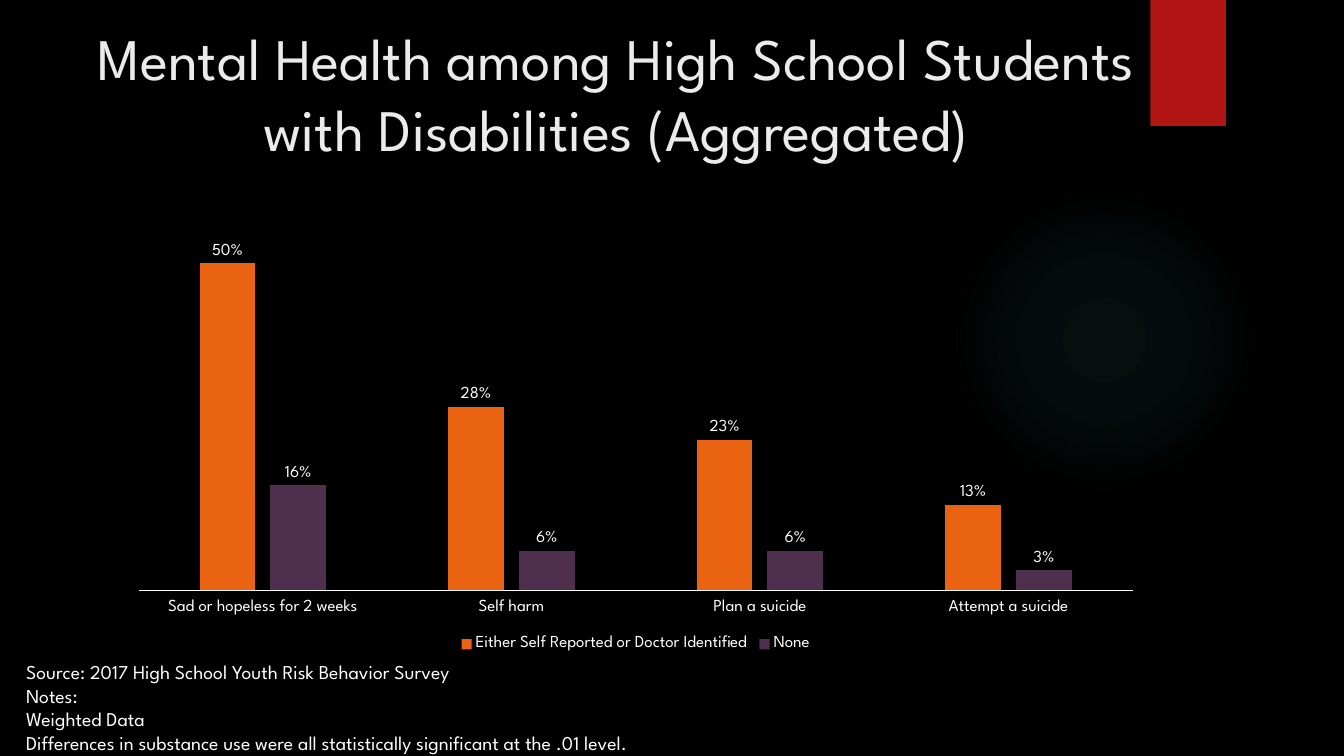
from dataclasses import dataclass

from lxml.etree import SubElement
from pptx import Presentation
from pptx.chart.data import CategoryChartData
from pptx.dml.color import RGBColor
from pptx.enum.chart import (XL_CHART_TYPE, XL_LABEL_POSITION,
                             XL_LEGEND_POSITION, XL_TICK_LABEL_POSITION,
                             XL_TICK_MARK)
from pptx.enum.shapes import MSO_SHAPE
from pptx.enum.text import MSO_ANCHOR, PP_ALIGN
from pptx.oxml import parse_xml
from pptx.oxml.ns import nsdecls, qn
from pptx.util import Inches, Pt

FONT = "League Spartan"
COLORS = {
    "background": "000000", "white": "FFFFFF", "title": "EBEBEB",
    "red": "B01513", "glow": "50B9C1", "orange": "EA6312", "purple": "4F2F4E",
}


@dataclass
class TextBlock:
    left: float
    top: float
    width: float
    height: float
    lines: list[str]
    size: float
    color: str
    align: PP_ALIGN
    anchor: MSO_ANCHOR


@dataclass
class Series:
    name: str
    values: list[float]
    color: str


TEXTS = [
    TextBlock(0.4, 0.15, 11.42, 1.53,
              ["Mental Health among High School Students "
               "with Disabilities (Aggregated)"],
              42, "title", PP_ALIGN.CENTER, MSO_ANCHOR.MIDDLE),
    TextBlock(0.16, 6.5, 13.18, 1.04,
              ["Source: 2017 High School Youth Risk Behavior Survey",
               "Notes:",
               "Weighted Data",
               "Differences in substance use were all statistically "
               "significant at the .01 level."],
              14, "white", PP_ALIGN.LEFT, MSO_ANCHOR.TOP),
]
CATEGORIES = ["Sad or hopeless for 2 weeks", "Self harm",
              "Plan a suicide", "Attempt a suicide"]
SERIES = [
    Series("Either Self Reported or Doctor Identified",
           [0.5, 0.28, 0.23, 0.13], "orange"),
    Series("None", [0.16, 0.06, 0.06, 0.03], "purple"),
]
GLOW_STOPS = [(0, 7), (36, 6), (69, 0)]  # position and opacity, percent


def rgb(name: str) -> RGBColor:
    return RGBColor.from_string(COLORS[name])


def style_font(font, size: float, color: str = "white") -> None:
    font.name = FONT
    font.size = Pt(size)
    font.color.rgb = rgb(color)


def add_plain_shape(s, kind: MSO_SHAPE, left: float, top: float,
                    width: float, height: float):
    sp = s.shapes.add_shape(kind, Inches(left), Inches(top),
                            Inches(width), Inches(height))
    sp.shadow.inherit = False
    sp.line.fill.background()
    return sp


def add_glow(s) -> None:
    sp = add_plain_shape(s, MSO_SHAPE.OVAL, 9.41, 1.83, 3.08, 3.08)
    sp.fill.background()
    grad = parse_xml(f'<a:gradFill {nsdecls("a")} rotWithShape="1"/>')
    stops = SubElement(grad, qn("a:gsLst"))
    for pos, opacity in GLOW_STOPS:
        stop = SubElement(stops, qn("a:gs"), pos=str(pos * 1000))
        color = SubElement(stop, qn("a:srgbClr"), val=COLORS["glow"])
        SubElement(color, qn("a:alpha"), val=str(opacity * 1000))
    circle = SubElement(grad, qn("a:path"), path="circle")
    SubElement(circle, qn("a:fillToRect"),
               {side: "50000" for side in "ltrb"})
    props = sp.element.spPr
    props.replace(props.find(qn("a:noFill")), grad)


def add_text(s, block: TextBlock) -> None:
    sp = s.shapes.add_textbox(Inches(block.left), Inches(block.top),
                              Inches(block.width), Inches(block.height))
    tf = sp.text_frame
    tf.word_wrap = True
    tf.vertical_anchor = block.anchor
    for i, line in enumerate(block.lines):
        p = tf.add_paragraph() if i else tf.paragraphs[0]
        p.alignment = block.align
        r = p.add_run()
        r.text = line
        style_font(r.font, block.size, block.color)


def add_survey_chart(s) -> None:
    data = CategoryChartData(number_format="0%")
    data.categories = CATEGORIES
    for series in SERIES:
        data.add_series(series.name, series.values)
    chart = s.shapes.add_chart(
        XL_CHART_TYPE.COLUMN_CLUSTERED, Inches(1.17), Inches(1.87),
        Inches(10.27), Inches(4.64), data).chart
    style_font(chart.font, 10)
    chart.has_title = False

    # Legend
    chart.has_legend = True
    chart.legend.position = XL_LEGEND_POSITION.BOTTOM
    chart.legend.include_in_layout = False
    style_font(chart.legend.font, 12)

    # Axes
    cat_axis = chart.category_axis
    cat_axis.major_tick_mark = XL_TICK_MARK.NONE
    cat_axis.tick_label_position = XL_TICK_LABEL_POSITION.LOW
    cat_axis.format.line.color.rgb = rgb("white")
    cat_axis.format.line.width = Pt(0.75)
    style_font(cat_axis.tick_labels.font, 12)
    val_axis = chart.value_axis
    val_axis.visible = False
    val_axis.has_major_gridlines = False
    val_axis.minimum_scale = 0
    val_axis.maximum_scale = 0.6

    # Columns and their labels
    plot = chart.plots[0]
    plot.gap_width = 219
    plot.overlap = -27
    plot.vary_by_categories = False
    for columns, series in zip(plot.series, SERIES):
        columns.format.fill.solid()
        columns.format.fill.fore_color.rgb = rgb(series.color)
        labels = columns.data_labels
        labels.show_value = True
        labels.position = XL_LABEL_POSITION.OUTSIDE_END
        labels.number_format = "0%"
        labels.number_format_is_linked = False
        style_font(labels.font, 12)


def main() -> None:
    prs = Presentation()
    prs.slide_width = Inches(13.33)
    prs.slide_height = Inches(7.5)
    s = prs.slides.add_slide(prs.slide_layouts[6])
    s.background.fill.solid()
    s.background.fill.fore_color.rgb = rgb("background")

    # Backdrop
    add_glow(s)
    ribbon = add_plain_shape(s, MSO_SHAPE.RECTANGLE, 11.41, 0, 0.75, 1.25)
    ribbon.fill.solid()
    ribbon.fill.fore_color.rgb = rgb("red")

    # Content
    add_survey_chart(s)
    for block in TEXTS:
        add_text(s, block)
    prs.save("out.pptx")


if __name__ == "__main__":
    main()
